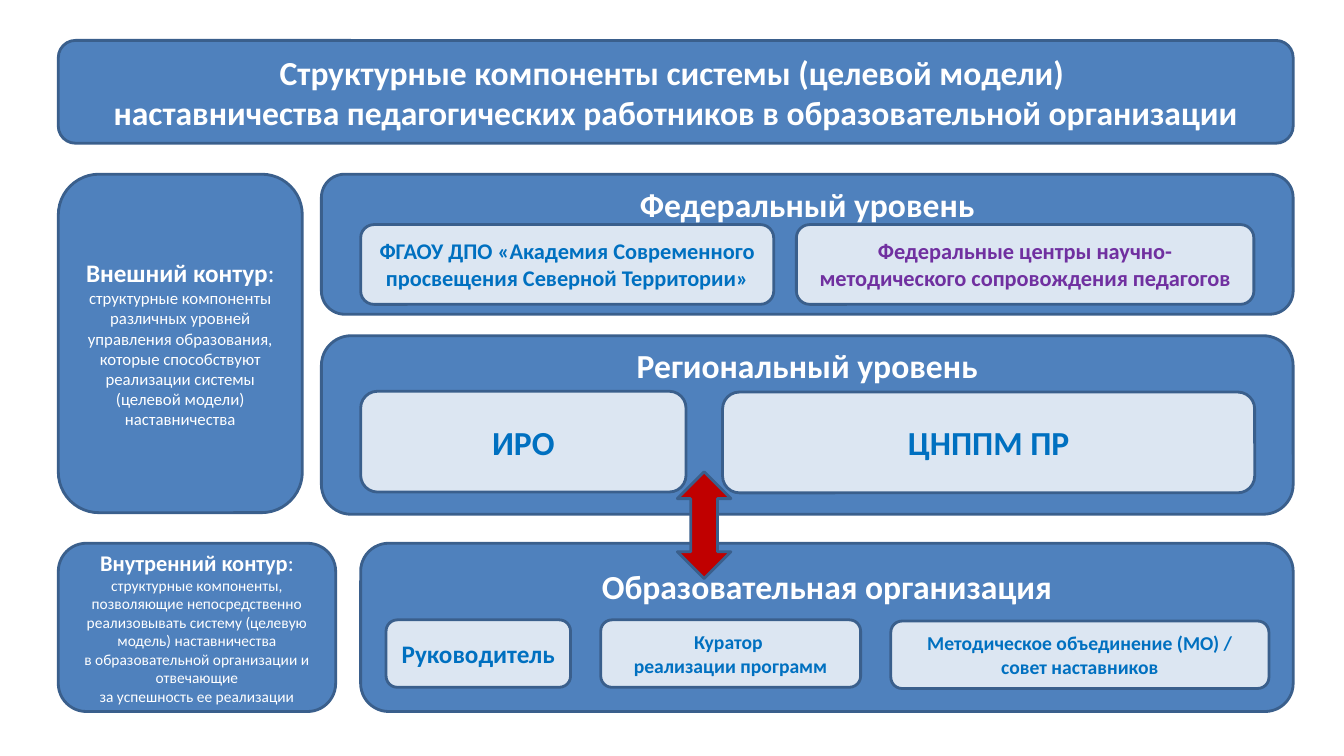
import pptx
import pptx.util
import pptx.dml.color
import pptx.enum.shapes
import pptx.enum.text

Cm = pptx.util.Cm
Pt = pptx.util.Pt
PRESET = pptx.enum.shapes.MSO_SHAPE
ANCHOR = pptx.enum.text.MSO_ANCHOR

COLOURS = {
    "panel": "4F81BD",
    "outline": "3A5F8C",
    "card": "DCE6F2",
    "white": "FFFFFF",
    "blue": "0070C0",
    "purple": "7030A0",
    "red": "C00000",
}


def rgb(name):
    return pptx.dml.color.RGBColor.from_string(COLOURS[name])


def write(shape, paragraphs, colour, anchor=ANCHOR.MIDDLE):
    frame = shape.text_frame
    frame.word_wrap = True
    frame.auto_size = pptx.enum.text.MSO_AUTO_SIZE.NONE
    frame.vertical_anchor = anchor
    for index, pieces in enumerate(paragraphs):
        paragraph = frame.add_paragraph() if index else frame.paragraphs[0]
        paragraph.alignment = pptx.enum.text.PP_ALIGN.CENTER
        for text, size, bold in pieces:
            run = paragraph.add_run()
            run.text = text
            run.font.name = "Calibri"
            run.font.size = Pt(size)
            run.font.bold = bold
            run.font.color.rgb = rgb(colour)


def bold_lines(lines, size):
    return [[(line, size, True)] for line in lines]


def add_block(slide, box, fill, preset=PRESET.ROUNDED_RECTANGLE):
    block = slide.shapes.add_shape(preset, *map(Cm, box))
    block.shadow.inherit = False
    block.fill.solid()
    block.fill.fore_color.rgb = rgb(fill)
    block.line.color.rgb = rgb("outline")
    block.line.width = Pt(2)
    return block


def add_heading(slide, box, lines):
    banner = add_block(slide, box, "panel")
    heading = slide.shapes.title
    heading.left, heading.top, heading.width, heading.height = map(Cm, box)
    write(heading, bold_lines(lines, 24), "white")
    banner._element.addnext(heading._element)


def add_contour(slide, box, paragraphs):
    write(add_block(slide, box, "panel"), paragraphs, "white")


def add_level(slide, box, name, top_inset):
    level = add_block(slide, box, "panel")
    write(level, bold_lines([name], 24), "white", ANCHOR.TOP)
    level.text_frame.margin_top = Cm(top_inset)


def add_card(slide, box, lines, size, colour="blue"):
    write(add_block(slide, box, "card"), bold_lines(lines, size), colour)


def main():
    deck = pptx.Presentation()
    deck.slide_width, deck.slide_height = Cm(33.87), Cm(19.05)
    slide = deck.slides.add_slide(deck.slide_layouts[5])

    add_heading(slide, (1.47, 1.02, 31.12, 2.59), [
        "Структурные компоненты системы (целевой модели) ",
        "наставничества педагогических работников в образовательной организации",
    ])

    add_contour(slide, (1.47, 4.39, 6.15, 8.53), [[
        ("Внешний контур", 18, True),
        (": ", 18, False),
        ("структурные компоненты различных уровней управления образования, "
         "которые способствуют реализации системы (целевой модели) "
         "наставничества", 12, False),
    ]])
    add_contour(slide, (1.47, 13.69, 6.99, 4.24), [
        [("Внутренний контур", 16, True), (":", 16, False)],
        [("структурные компоненты, позволяющие непосредственно реализовывать "
          "систему (целевую модель) наставничества", 11, False)],
        [("в образовательной организации и отвечающие", 11, False)],
        [("за успешность ее реализации", 11, False)],
    ])

    add_level(slide, (8.1, 4.39, 24.49, 3.53), "Федеральный уровень", 0.07)
    add_card(slide, (9.09, 5.66, 10.41, 2.01),
             ["ФГАОУ ДПО «Академия Современного просвещения Северной Территории»"], 16)
    add_card(slide, (20.07, 5.66, 11.53, 2.01),
             ["Федеральные центры научно-методического сопровождения педагогов"],
             16, "purple")

    add_level(slide, (8.1, 8.46, 24.49, 4.5), "Региональный уровень", 0)
    add_card(slide, (9.09, 9.86, 8.2, 2.54), ["ИРО"], 24)
    add_card(slide, (18.21, 9.88, 13.41, 2.54), ["ЦНППМ ПР"], 24)

    add_level(slide, (9.09, 13.69, 23.5, 4.24), "Образовательная организация", 0.37)
    add_card(slide, (9.73, 15.62, 4.65, 1.7), ["Руководитель"], 18)
    add_card(slide, (15.14, 15.62, 6.55, 1.7), ["Куратор ", "реализации программ"], 14)
    add_card(slide, (22.45, 15.65, 9.53, 1.7),
             ["Методическое объединение (МО) /", "совет наставников"], 14)

    add_block(slide, (17.07, 11.89, 1.35, 2.69), "red", PRESET.UP_DOWN_ARROW)

    deck.save("out.pptx")


if __name__ == "__main__":
    main()
